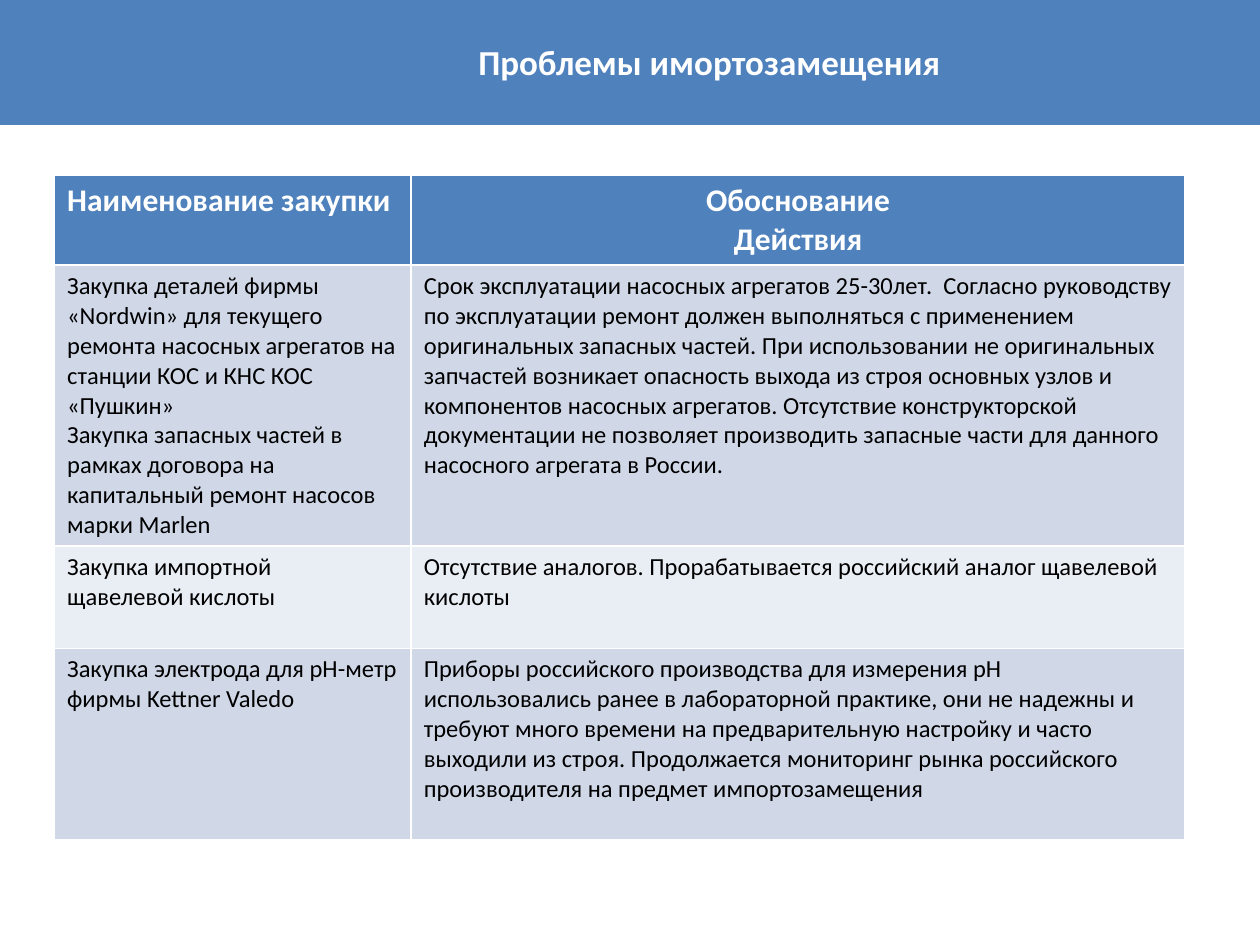
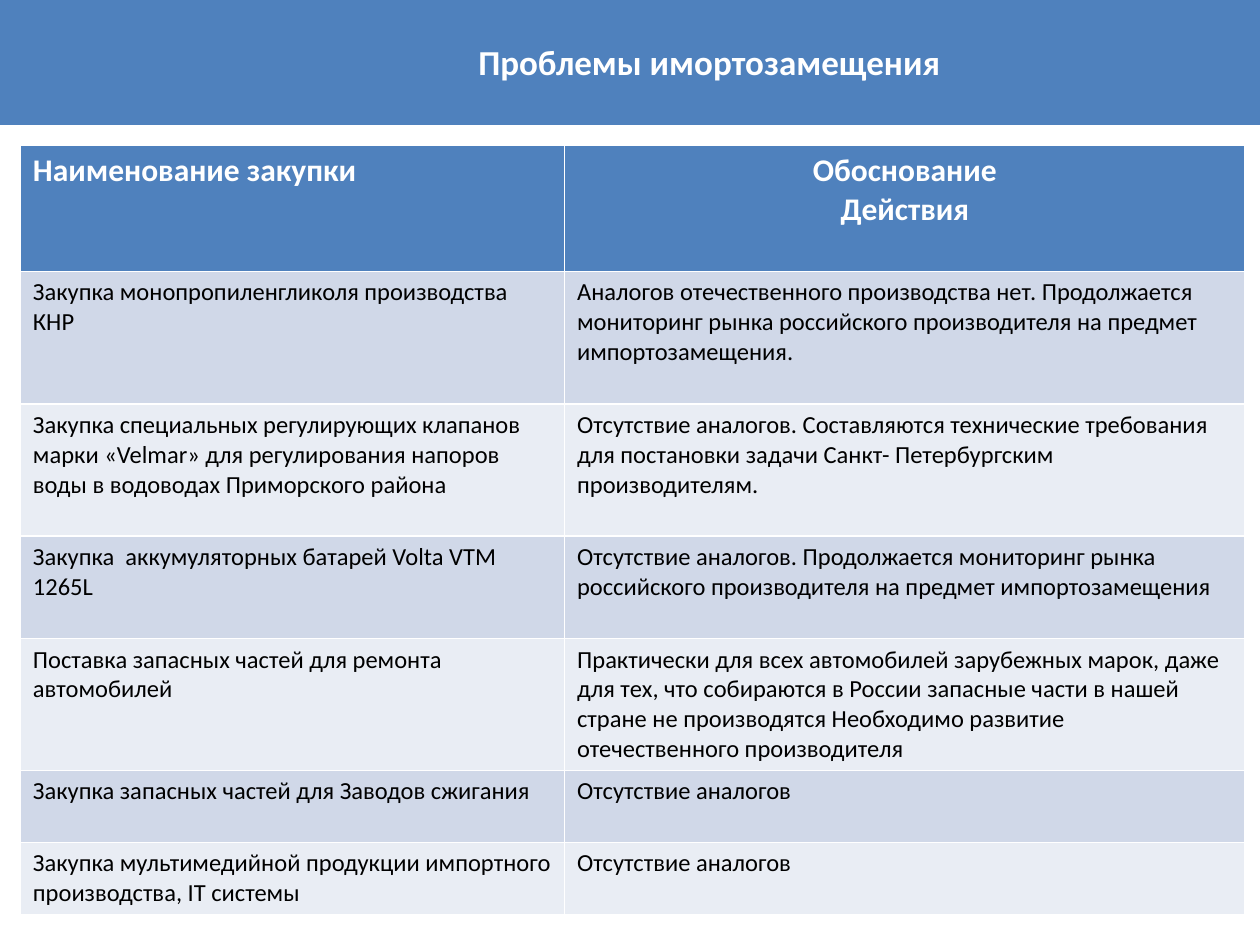
from pptx import Presentation
from pptx.dml.color import RGBColor
from pptx.enum.shapes import MSO_SHAPE as Shape
from pptx.enum.text import MSO_ANCHOR as Anchor, PP_ALIGN as Align
from pptx.util import Cm, Pt

COLORS = {
    "blue": "4F81BD",
    "white": "FFFFFF",
    "black": "000000",
    "odd_row": "D0D8E8",
    "even_row": "E9EDF4",
}
FONT = "Calibri"
TITLE = "Проблемы имортозамещения"
HEADER = ("Наименование закупки", "Обоснование\nДействия")

# Lengths are in centimetres; the first row height belongs to the header.
TABLES = [
    {
        "left": 1.1, "top": 3.54,
        "columns": (7.19, 15.6),
        "heights": (1.77, 5.66, 2.06, 3.85),
        "rows": [
            ("Закупка деталей фирмы «Nordwin» для текущего ремонта насосных "
             "агрегатов на станции КОС и КНС КОС «Пушкин»\n"
             "Закупка запасных частей в рамках договора на капитальный ремонт "
             "насосов марки Marlen",
             "Срок эксплуатации насосных агрегатов 25-30лет.  Согласно "
             "руководству по эксплуатации ремонт должен выполняться с "
             "применением оригинальных запасных частей. При использовании не "
             "оригинальных запчастей возникает опасность выхода из строя "
             "основных узлов и компонентов насосных агрегатов. Отсутствие "
             "конструкторской документации не позволяет производить запасные "
             "части для данного насосного агрегата в России."),
            ("Закупка импортной  щавелевой кислоты",
             "Отсутствие аналогов. Прорабатывается российский аналог "
             "щавелевой кислоты"),
            ("Закупка электрода для pH-метр фирмы Kettner Valedo",
             "Приборы российского производства для измерения рН "
             "использовались ранее в лабораторной практике, они не надежны и "
             "требуют много времени на предварительную настройку и часто "
             "выходили из строя. Продолжается мониторинг рынка российского "
             "производителя на предмет импортозамещения"),
        ],
    },
    {
        "left": 0.41, "top": 2.93,
        "columns": (10.97, 13.72),
        "heights": (2.54, 2.67, 2.67, 2.06, 2.64, 1.45, 1.45),
        "rows": [
            ("Закупка монопропиленгликоля производства КНР",
             "Аналогов отечественного производства нет. Продолжается "
             "мониторинг рынка российского производителя на предмет "
             "импортозамещения."),
            ("Закупка специальных регулирующих клапанов марки «Velmar» для "
             "регулирования напоров воды в водоводах Приморского района",
             "Отсутствие аналогов. Составляются технические требования для "
             "постановки задачи Санкт- Петербургским производителям."),
            ("Закупка  аккумуляторных батарей Volta VTM 1265L",
             "Отсутствие аналогов. Продолжается мониторинг рынка российского "
             "производителя на предмет импортозамещения"),
            ("Поставка запасных частей для ремонта автомобилей",
             "Практически для всех автомобилей зарубежных марок, даже для "
             "тех, что собираются в России запасные части в нашей стране не "
             "производятся Необходимо развитие отечественного производителя"),
            ("Закупка запасных частей для Заводов сжигания",
             "Отсутствие аналогов"),
            ("Закупка мультимедийной продукции импортного производства, "
             "IT системы",
             "Отсутствие аналогов"),
        ],
    },
]


def paint(target, color):
    target.fill.solid()
    target.fill.fore_color.rgb = RGBColor.from_string(COLORS[color])


def write(frame, text, size=14, color="black", bold=False, align=Align.LEFT):
    """Fill a text frame, one paragraph for each line of the text."""
    frame.text = text
    for para in frame.paragraphs:
        para.alignment = align
        for span in para.runs:
            span.font.name = FONT
            span.font.size = Pt(size)
            span.font.bold = bold
            span.font.color.rgb = RGBColor.from_string(COLORS[color])


deck = Presentation()
deck.slide_width, deck.slide_height = Cm(25.4), Cm(19.05)
layout = deck.slide_layouts.get_by_name("Title Only")

for number, content in enumerate(TABLES):
    page = deck.slides.add_slide(layout)

    # The band is moved to the layout once, behind everything on both slides.
    if number == 0:
        band = page.shapes.add_shape(Shape.RECTANGLE, 0, Cm(-0.08), Cm(25.45), Cm(2.6))
        band.shadow.inherit = False
        band.line.fill.background()
        paint(band, "blue")
        band.element.nvSpPr.cNvPr.set("id", "99")
        layout.shapes.element.insert(2, band.element)

    title = page.shapes.title
    title.left, title.top = Cm(3.5), Cm(0.33)
    title.width, title.height = Cm(21.6), Cm(1.8)
    title.text_frame.vertical_anchor = Anchor.MIDDLE
    write(title.text_frame, TITLE, size=20, color="white", bold=True, align=Align.CENTER)

    rows = [HEADER, *content["rows"]]
    columns, heights = content["columns"], content["heights"]
    table = page.shapes.add_table(
        len(rows), len(columns), Cm(content["left"]), Cm(content["top"]),
        Cm(sum(columns)), Cm(sum(heights))).table
    for column, width in zip(table.columns, columns):
        column.width = Cm(width)
    for row, height in zip(table.rows, heights):
        row.height = Cm(height)

    for row_index, texts in enumerate(rows):
        for column_index, text in enumerate(texts):
            cell = table.cell(row_index, column_index)
            if row_index == 0:
                paint(cell, "blue")
                write(cell.text_frame, text, size=18, color="white", bold=True,
                      align=Align.CENTER if column_index else Align.LEFT)
            else:
                paint(cell, "odd_row" if row_index % 2 else "even_row")
                write(cell.text_frame, text)

deck.save("out.pptx")
